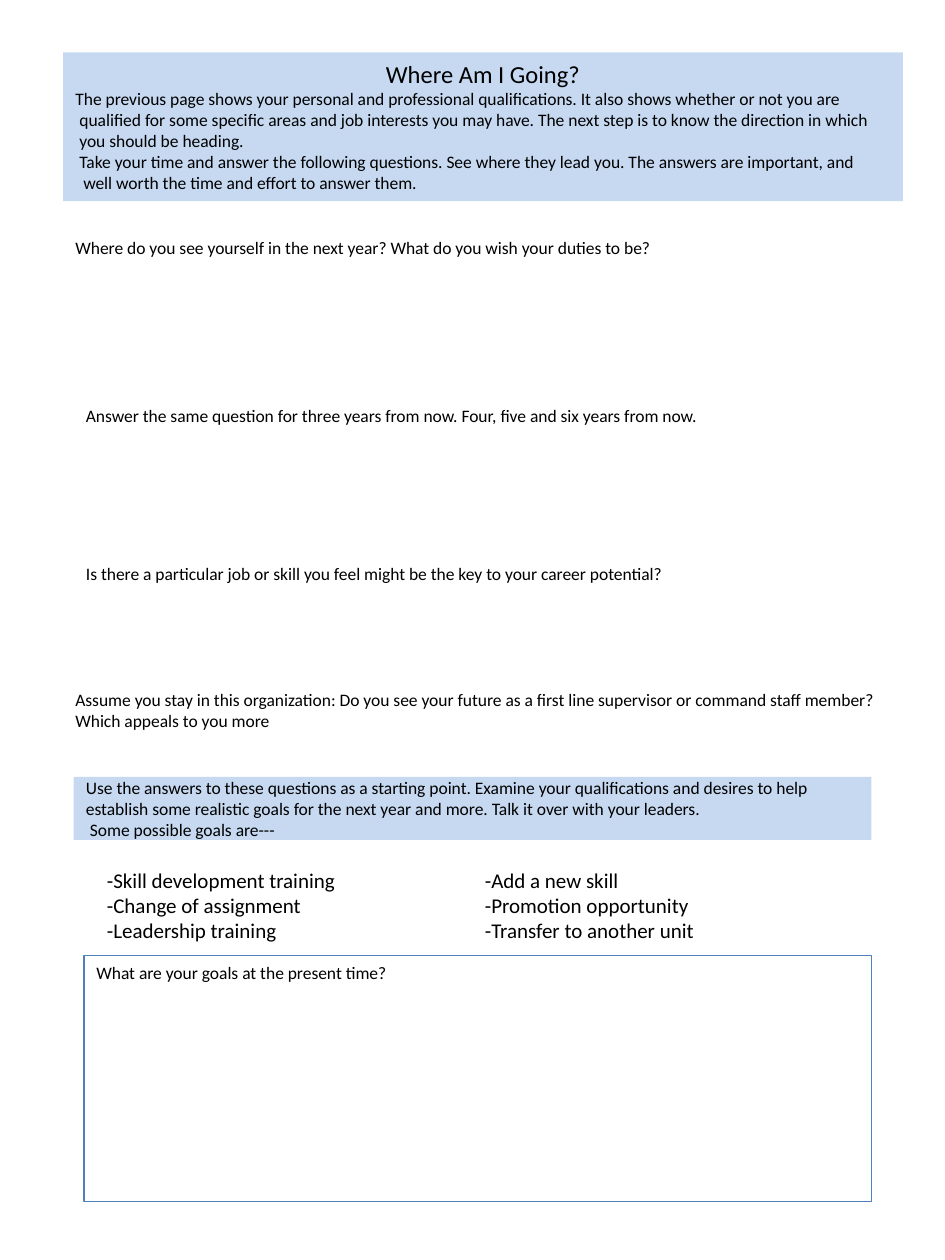
from pptx import Presentation
from pptx.dml.color import RGBColor
from pptx.enum import shapes, text
from pptx.oxml import parse_xml
from pptx.oxml.ns import nsdecls
from pptx.util import Inches, Pt

# The page is a grid of 90 columns by 120 rows
COLS, ROWS = 90, 120
COLORS = {"band": "C6D9F1", "line": "4F81BD", "text": "000000"}
FONT = "Calibri"
SPACE = Pt(2.26)  # width of one space at 10 pt

prs = Presentation()
prs.slide_width, prs.slide_height = Inches(7.5), Inches(10)
s = prs.slides.add_slide(prs.slide_layouts[6])


def grid(box):
    """Turn (column, row, columns, rows) into slide lengths."""
    x, y, w, h = box
    cw, rh = prs.slide_width / COLS, prs.slide_height / ROWS
    return round(x * cw), round(y * rh), round(w * cw), round(h * rh)


def color(name):
    return RGBColor.from_string(COLORS[name])


def write(sp, lines, size=10, wrap=True, anchor=text.MSO_ANCHOR.TOP):
    tf = sp.text_frame
    tf.text = "\n".join(lines)
    tf.word_wrap = wrap
    tf.vertical_anchor = anchor
    for p in tf.paragraphs:
        p.alignment = text.PP_ALIGN.LEFT
        for r in p.runs:
            r.font.name, r.font.size = FONT, Pt(size)
            r.font.color.rgb = color("text")
    return tf.paragraphs


def add_box(box, fill=None, line=None):
    sp = s.shapes.add_shape(shapes.MSO_SHAPE.RECTANGLE, *grid(box))
    sp.shadow.inherit = False
    if fill:
        sp.fill.solid()
        sp.fill.fore_color.rgb = color(fill)
    else:
        sp.fill.background()
    if line:
        sp.line.color.rgb = color(line)
        sp.line.width = Pt(0.75)
    else:
        sp.line.fill.background()
    return sp


def indent(p, spaces):
    p._p.get_or_add_pPr().set("marL", str(spaces * SPACE))


def header(box, title, lines, indents):
    first, *rest = write(add_box(box, fill="band"), [title] + lines)
    first.alignment = text.PP_ALIGN.CENTER
    first.runs[0].font.size = Pt(14)
    for p, spaces in zip(rest, indents):
        indent(p, spaces)


def question(box, lines):
    write(s.shapes.add_textbox(*grid(box)), lines, wrap=False)


def advice(box, lines):
    sp = add_box(box, fill="band")
    indent(write(sp, lines, anchor=text.MSO_ANCHOR.MIDDLE)[-1], 1)


def goal_list(box, pairs):
    lines = [f"-{left}\t-{right}" for left, right in pairs]
    for p in write(s.shapes.add_textbox(*grid(box)), lines, size=12):
        p._p.get_or_add_pPr().append(parse_xml(
            f'<a:tabLst {nsdecls("a")}><a:tab pos="{Inches(3)}" algn="l"/></a:tabLst>'))


def answer_box(box, prompt):
    write(add_box(box, line="line"), [prompt])


# Introduction
header((6, 5, 80, 14.16), "Where Am I Going?", [
    "The previous page shows your personal and professional qualifications. It also shows whether or not you are",
    "qualified for some specific areas and job interests you may have. The next step is to know the direction in which",
    "you should be heading.",
    "Take your time and answer the following questions. See where they lead you. The answers are important, and",
    "well worth the time and effort to answer them.",
], indents=(0, 1, 1, 1, 2))

# Questions with room to answer
for box, lines in [
    ((6, 22, 58, 3.2), ["Where do you see yourself in the next year? What do you wish your duties to be?"]),
    ((7, 38, 61.5, 3.2), ["Answer the same question for three years from now. Four, five and six years from now."]),
    ((7, 53, 58.2, 3.2), ["Is there a particular job or skill you feel might be the key to your career potential?"]),
    ((6, 65, 79.7, 5.3), [
        "Assume you stay in this organization: Do you see your future as a first line supervisor or command staff member?",
        "Which appeals to you more"]),
]:
    question(box, lines)

# Advice and possible goals
advice((7, 74, 76, 6), [
    "Use the answers to these questions as a starting point. Examine your qualifications and desires to help "
    "establish some realistic goals for the next year and more. Talk it over with your leaders.",
    "Some possible goals are---",
])
goal_list((9, 82, 74, 8.5), [
    ("Skill development training", "Add a new skill"),
    ("Change of assignment", "Promotion opportunity"),
    ("Leadership training", "Transfer to another unit"),
])

# Present goals
answer_box((8, 91, 75, 23.4), "What are your goals at the present time?")

prs.save("out.pptx")
